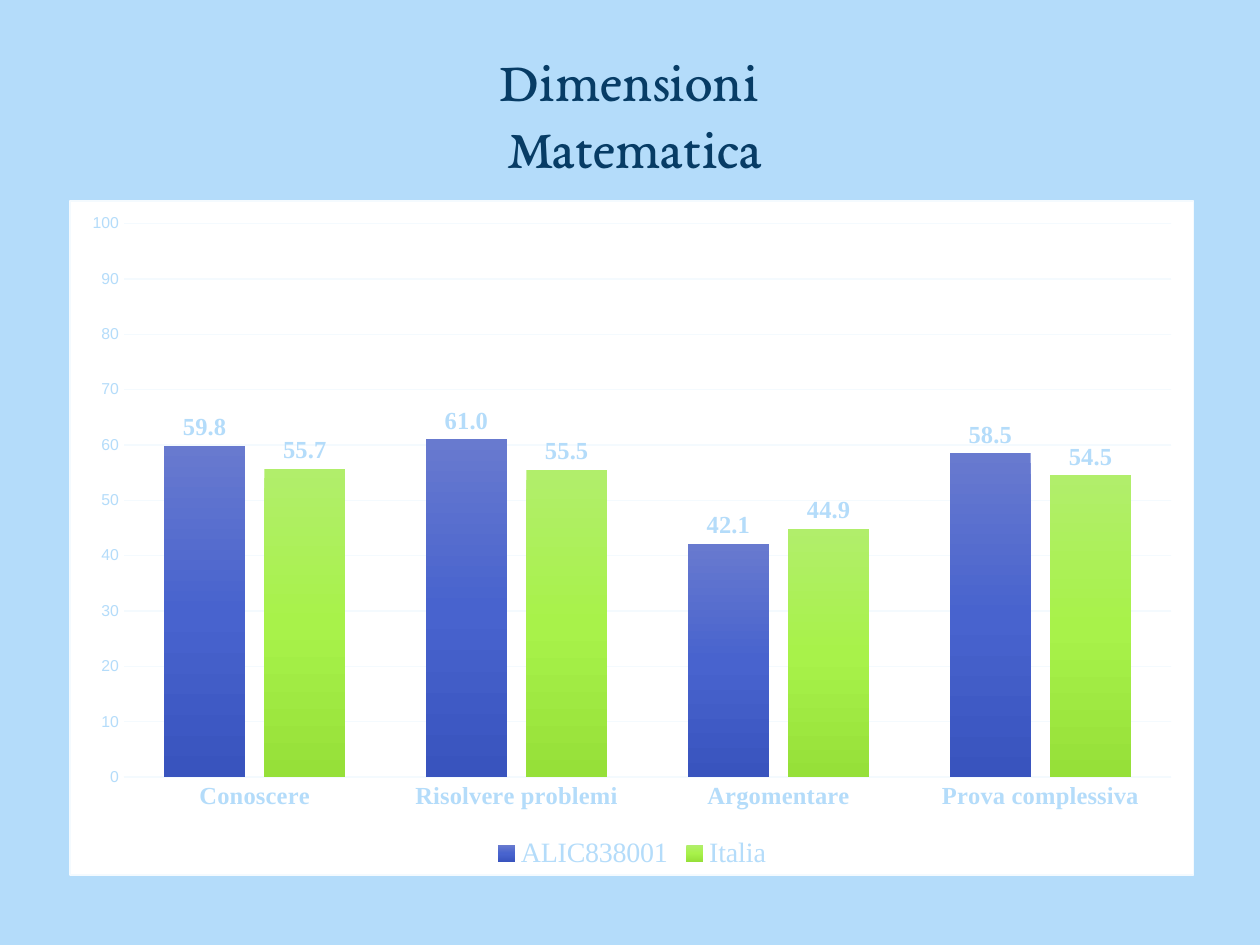
import dataclasses

import pptx
import pptx.chart.data
import pptx.dml.color
import pptx.enum.chart
import pptx.enum.text
import pptx.oxml
import pptx.oxml.ns
import pptx.util

Cm = pptx.util.Cm
Pt = pptx.util.Pt
SKY = "B4DCFA"
NAVY = "073C65"
PALE = "F4FAFE"
SERIF = "Times New Roman"
LABELS = ["Conoscere", "Risolvere problemi", "Argomentare", "Prova complessiva"]


@dataclasses.dataclass
class Group:
    name: str
    scores: list[float]
    shades: list[str]


GROUPS = [
    Group("ALIC838001", [59.8, 61.0, 42.1, 58.5], ["687ACF", "4863CE", "3954BE"]),
    Group("Italia", [55.7, 55.5, 44.9, 54.5], ["B1EE6B", "A8F24A", "96E039"]),
]


def tint(code: str) -> pptx.dml.color.RGBColor:
    return pptx.dml.color.RGBColor.from_string(code)


def style(font, size: float, color: str = SKY, face: str = SERIF, bold: bool = False) -> None:
    font.size = Pt(size)
    font.name = face
    font.bold = bold
    font.color.rgb = tint(color)


def rule(line) -> None:
    line.color.rgb = tint(PALE)
    line.width = Pt(0.75)


def shade(bars, group: Group) -> None:
    step = 100000 // (len(group.shades) - 1)
    stops = "".join(
        f'<a:gs pos="{i * step}"><a:srgbClr val="{code}"/></a:gs>'
        for i, code in enumerate(group.shades)
    )
    bars.format.fill.gradient()
    props = bars.format.fill._xPr
    old = props.find(pptx.oxml.ns.qn("a:gradFill"))
    new = pptx.oxml.parse_xml(
        f'<a:gradFill {pptx.oxml.ns.nsdecls("a")} rotWithShape="1"><a:gsLst>{stops}</a:gsLst>'
        '<a:lin ang="5400000" scaled="0"/></a:gradFill>'
    )
    props.replace(old, new)


def frame(chart) -> None:
    props = pptx.oxml.parse_xml(
        f'<c:spPr {pptx.oxml.ns.nsdecls("c", "a")}>'
        '<a:solidFill><a:srgbClr val="FFFFFF"/></a:solidFill>'
        f'<a:ln w="{Pt(0.75)}"><a:solidFill><a:srgbClr val="{PALE}"/></a:solidFill></a:ln>'
        "</c:spPr>"
    )
    chart.element.find(pptx.oxml.ns.qn("c:chart")).addnext(props)


def add_title(slide) -> None:
    title = slide.shapes.title
    title.left, title.top, title.width, title.height = Cm(0.3), Cm(0.79), Cm(24.77), Cm(3)
    text = title.text_frame
    text.text = "Dimensioni\n Matematica"
    text.word_wrap = True
    text.auto_size = pptx.enum.text.MSO_AUTO_SIZE.NONE
    text.vertical_anchor = pptx.enum.text.MSO_ANCHOR.TOP
    for line in text.paragraphs:
        line.alignment = pptx.enum.text.PP_ALIGN.CENTER
        line.space_before = Pt(0)
        style(line.font, 32, NAVY, "EB Garamond")


def add_bars(slide) -> None:
    data = pptx.chart.data.CategoryChartData(number_format="0.0")
    data.categories = LABELS
    for group in GROUPS:
        data.add_series(group.name, group.scores)
    chart = slide.shapes.add_chart(
        pptx.enum.chart.XL_CHART_TYPE.COLUMN_CLUSTERED,
        Cm(1.4), Cm(4.04), Cm(22.68), Cm(13.61), data,
    ).chart
    style(chart.font, 10, "000000", "Arial")
    frame(chart)
    chart.has_title = False
    chart.has_legend = True
    chart.legend.position = pptx.enum.chart.XL_LEGEND_POSITION.BOTTOM
    chart.legend.include_in_layout = False
    style(chart.legend.font, 16)

    base, scale = chart.category_axis, chart.value_axis
    for axis in (base, scale):
        axis.major_tick_mark = pptx.enum.chart.XL_TICK_MARK.NONE
        axis.minor_tick_mark = pptx.enum.chart.XL_TICK_MARK.NONE
    style(base.tick_labels.font, 14, bold=True)
    rule(base.format.line)
    style(scale.tick_labels.font, 9, face="Arial")
    scale.tick_labels.number_format = "0"
    scale.tick_labels.number_format_is_linked = False
    scale.minimum_scale, scale.maximum_scale, scale.major_unit = 0, 100, 10
    scale.format.line.fill.background()
    rule(scale.major_gridlines.format.line)

    plot = chart.plots[0]
    plot.vary_by_categories = False
    plot.gap_width, plot.overlap = 100, -24
    for bars, group in zip(plot.series, GROUPS):
        shade(bars, group)
        tags = bars.data_labels
        tags.show_value = True
        tags.position = pptx.enum.chart.XL_LABEL_POSITION.OUTSIDE_END
        tags.number_format = "0.0"
        tags.number_format_is_linked = False
        style(tags.font, 14, bold=True)


def main() -> None:
    deck = pptx.Presentation()
    deck.slide_width, deck.slide_height = Cm(25.4), Cm(19.05)
    slide = deck.slides.add_slide(deck.slide_layouts.get_by_name("Title Only"))
    slide.background.fill.solid()
    slide.background.fill.fore_color.rgb = tint(SKY)
    add_title(slide)
    add_bars(slide)
    deck.save("out.pptx")


if __name__ == "__main__":
    main()
